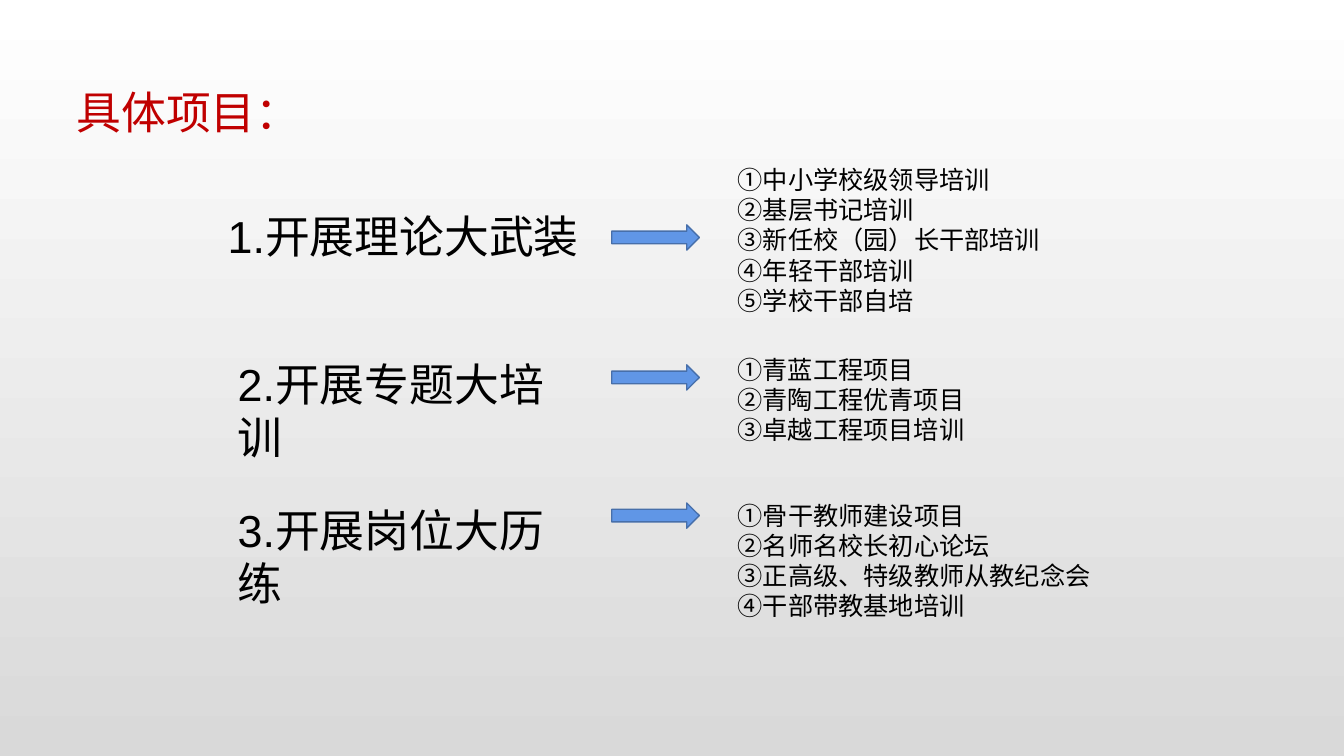
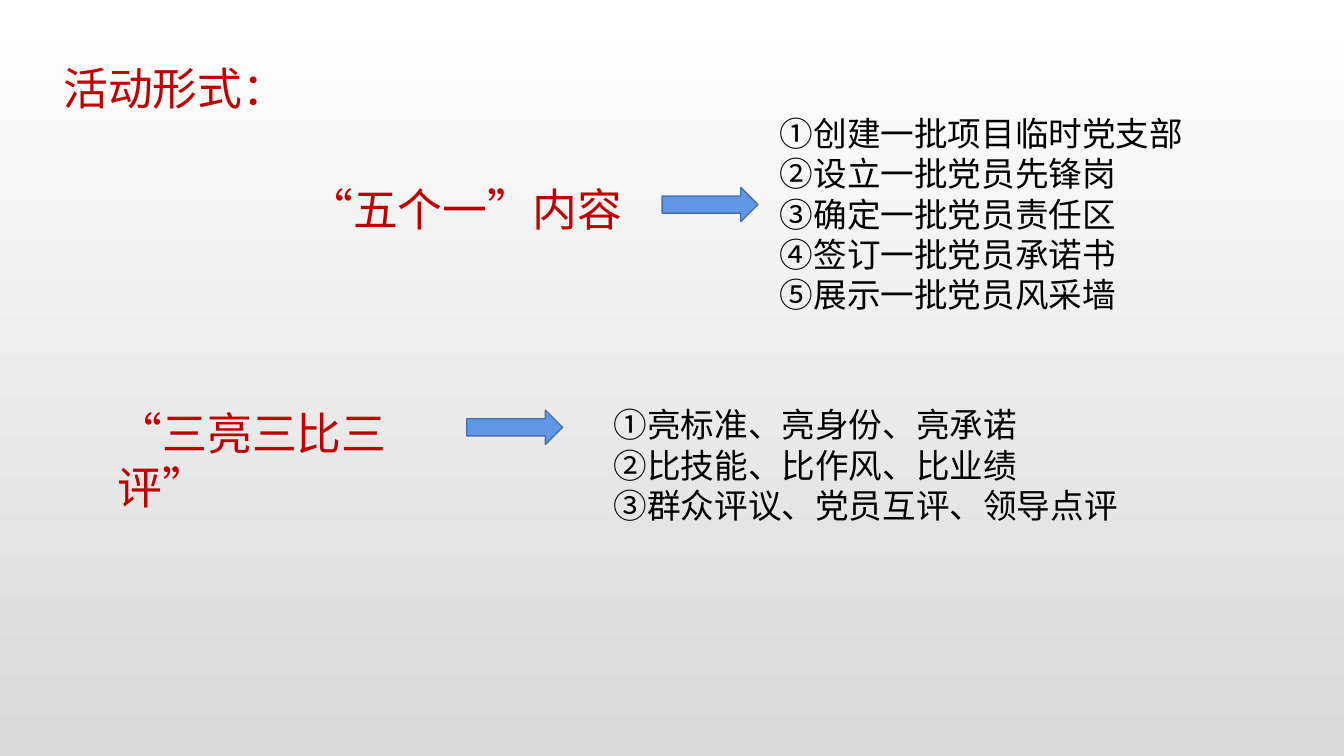
from pptx import Presentation
from pptx.dml.color import RGBColor
from pptx.enum import shapes, text
from pptx.oxml import ns
from pptx.util import Pt
from lxml import etree

COLORS = {"top": "FFFFFF", "bottom": "D9D9D9", "red": "C00000",
          "black": "000000", "arrow": "6096E6", "outline": "476FAA"}
EAST_ASIAN = "Noto Sans CJK SC"
HEADING_SIZE = 32
LINE_RATIO = 1.2     # line pitch relative to text size
TOP_RATIO = 0.12     # extra top inset that centres the glyphs in a line

# Each topic: label, (left, top, width), arrow (left, top), list (left, top), items
SLIDES = [
    {"title": "具体项目：", "title_at": (47.5, 53.3), "label_color": "black",
     "arrow_size": (62.6, 18), "item_size": 18, "item_font": EAST_ASIAN,
     "topics": [
         ("1.开展理论大武装", (155.5, 141.8, 328), (437, 160.6), (519.8, 111.6),
          ["①中小学校级领导培训", "②基层书记培训", "③新任校（园）长干部培训",
           "④年轻干部培训", "⑤学校干部自培"]),
         ("2.开展专题大培训", (162.7, 247, 265), (437, 260.6), (519.8, 247),
          ["①青蓝工程项目", "②青陶工程优青项目", "③卓越工程项目培训"]),
         ("3.开展岗位大历练", (162.7, 351.4, 265), (437, 359.3), (519.8, 351.4),
          ["①骨干教师建设项目", "②名师名校长初心论坛",
           "③正高级、特级教师从教纪念会", "④干部带教基地培训"]),
     ]},
    {"title": "活动形式：", "title_at": (38.2, 36), "label_color": "red",
     "arrow_size": (68.4, 24.5), "item_size": 24, "item_font": "Arial",
     "topics": [
         ("“五个一”内容", (213.1, 122.4, 242.6), (473, 133.9), (550, 74.2),
          ["①创建一批项目临时党支部", "②设立一批党员先锋岗", "③确定一批党员责任区",
           "④签订一批党员承诺书", "⑤展示一批党员风采墙"]),
         ("“三亮三比三评”", (77, 282.2, 242.6), (333.4, 293), (431.3, 282.2),
          ["①亮标准、亮身份、亮承诺", "②比技能、比作风、比业绩",
           "③群众评议、党员互评、领导点评"]),
     ]},
]


def rgb(name):
    return RGBColor.from_string(COLORS[name])


def paint_background(master):
    fill = master.background.fill
    fill.gradient()
    fill.gradient_angle = 270
    for stop, name, position in zip(fill.gradient_stops, ("top", "bottom"), (0, 1)):
        stop.color.rgb = rgb(name)
        stop.position = position


def add_text(slide, lines, at, width, size=HEADING_SIZE, color="black", font="Arial"):
    pitch = size * LINE_RATIO
    box = slide.shapes.add_textbox(Pt(at[0]), Pt(at[1]), Pt(width),
                                   Pt(len(lines) * pitch + 7.2))
    frame = box.text_frame
    frame_format = {"word_wrap": True, "margin_top": Pt(3.6 + size * TOP_RATIO),
                    "margin_bottom": 0, "auto_size": text.MSO_AUTO_SIZE.NONE}
    for name, value in frame_format.items():
        setattr(frame, name, value)
    frame.text = "\n".join(lines)
    for paragraph in frame.paragraphs:
        paragraph.line_spacing = Pt(pitch)
        for run in paragraph.runs:
            for name, value in {"size": Pt(size), "name": font}.items():
                setattr(run.font, name, value)
            run.font.color.rgb = rgb(color)
            run.font.language_id = text_language
            east_asian = etree.SubElement(run._r.get_or_add_rPr(), ns.qn("a:ea"))
            east_asian.set("typeface", EAST_ASIAN)


def add_arrow(slide, at, size):
    arrow = slide.shapes.add_shape(shapes.MSO_SHAPE.RIGHT_ARROW,
                                   *(Pt(length) for length in at + size))
    arrow.shadow.inherit = False
    arrow.fill.solid()
    arrow.fill.fore_color.rgb = rgb("arrow")
    arrow.line.color.rgb = rgb("outline")
    arrow.line.width = Pt(1)


def build_slide(prs, content):
    slide = prs.slides.add_slide(prs.slide_layouts[6])
    add_text(slide, [content["title"]], content["title_at"], 180, color="red")
    size = content["item_size"]
    for label, (left, top, width), arrow_at, list_at, items in content["topics"]:
        add_text(slide, [label], (left, top), width, color=content["label_color"])
        add_arrow(slide, arrow_at, content["arrow_size"])
        list_width = (max(map(len, items)) + 1) * size + 14.4
        add_text(slide, items, list_at, list_width, size, font=content["item_font"])


def main():
    prs = Presentation()
    prs.slide_width, prs.slide_height = Pt(960), Pt(540)
    paint_background(prs.slide_master)
    for content in SLIDES:
        build_slide(prs, content)
    prs.save("out.pptx")


if __name__ == "__main__":
    from pptx.enum.lang import MSO_LANGUAGE_ID
    text_language = MSO_LANGUAGE_ID.SIMPLIFIED_CHINESE
    main()
